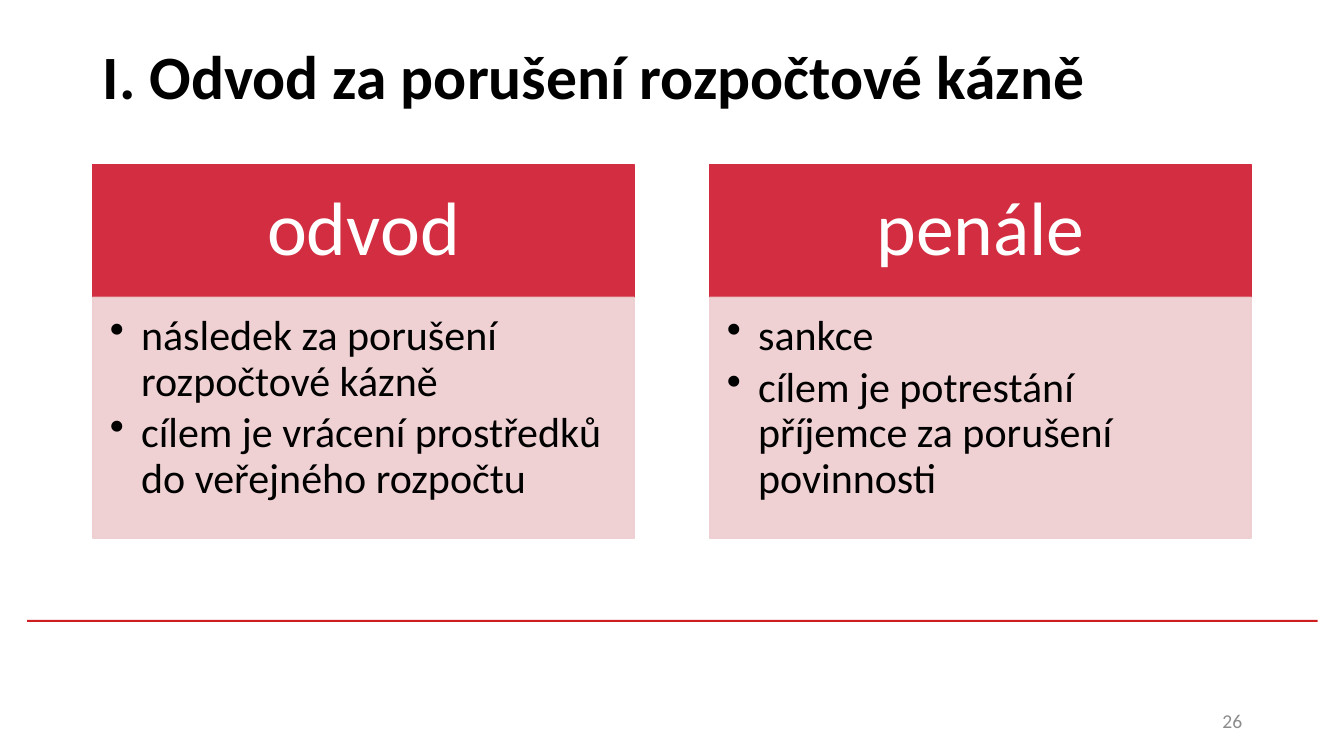
from lxml import etree
from pptx import Presentation
from pptx.dml.color import RGBColor
from pptx.enum.shapes import MSO_SHAPE
from pptx.enum.text import MSO_ANCHOR, MSO_AUTO_SIZE, PP_ALIGN
from pptx.oxml.ns import qn
from pptx.util import Inches, Pt

RECTANGLE = MSO_SHAPE.RECTANGLE
TOP, MIDDLE = MSO_ANCHOR.TOP, MSO_ANCHOR.MIDDLE
LEFT, CENTER, RIGHT = PP_ALIGN.LEFT, PP_ALIGN.CENTER, PP_ALIGN.RIGHT
NO_AUTOFIT = MSO_AUTO_SIZE.NONE

BLACK = RGBColor(0x00, 0x00, 0x00)
WHITE = RGBColor(0xFF, 0xFF, 0xFF)
GRAY = RGBColor(0x8C, 0x8C, 0x8C)
RED = RGBColor(0xD2, 0x2D, 0x40)
RULE_RED = RGBColor(0xCD, 0x1F, 0x21)
PINK = RGBColor(0xEE, 0xCD, 0xCF)

FONT = "Calibri"
COLUMN_LEFT, COLUMN_PITCH, COLUMN_WIDTH = 0.92, 6.12, 5.37
HEADER_TOP, HEADER_HEIGHT, BODY_HEIGHT = 1.63, 1.32, 2.39
COLUMNS = [
    ("odvod", ["následek za porušení rozpočtové kázně",
               "cílem je vrácení prostředků do veřejného rozpočtu"]),
    ("penále", ["sankce",
                "cílem je potrestání příjemce za porušení povinnosti"]),
]


def add_text(paragraph, text, size, color, alignment=LEFT, bold=False):
    """Add one formatted run to a paragraph."""
    paragraph.alignment = alignment
    run = paragraph.add_run()
    run.text = text
    run.font.name = FONT
    run.font.size = Pt(size)
    run.font.bold = bold
    run.font.color.rgb = color


def set_frame(frame, anchor, insets=(0.1, 0.05, 0.1, 0.05)):
    """Set wrapping, anchor and insets of a text frame."""
    frame.word_wrap = True
    frame.auto_size = NO_AUTOFIT
    frame.vertical_anchor = anchor
    (frame.margin_left, frame.margin_top,
     frame.margin_right, frame.margin_bottom) = map(Inches, insets)


def add_bullet(paragraph):
    """Give a paragraph a hanging bullet."""
    properties = paragraph._p.get_or_add_pPr()
    properties.set("marL", str(Inches(0.31)))
    properties.set("indent", str(-Inches(0.31)))
    etree.SubElement(properties, qn("a:buChar")).set("char", "•")


def add_rectangle(slide, left, top, width, height, color, outlined=True, opacity=100):
    """Add a flat rectangle, optionally outlined in its own colour."""
    shape = slide.shapes.add_shape(
        RECTANGLE, Inches(left), Inches(top), Inches(width), Inches(height))
    shape.shadow.inherit = False
    shape.fill.solid()
    shape.fill.fore_color.rgb = color
    if outlined:
        shape.line.color.rgb = color
        shape.line.width = Pt(1)
    else:
        shape.line.fill.background()
    if opacity < 100:
        for color_element in shape._element.spPr.iter(qn("a:srgbClr")):
            etree.SubElement(color_element, qn("a:alpha")).set("val", str(opacity * 1000))
    return shape


def add_column(slide, left, heading, items):
    """Add a red heading box above a pink box of bullets."""
    header = add_rectangle(slide, left, HEADER_TOP, COLUMN_WIDTH, HEADER_HEIGHT, RED)
    set_frame(header.text_frame, MIDDLE, (0.42, 0.24, 0.42, 0.24))
    paragraph = header.text_frame.paragraphs[0]
    paragraph.line_spacing = 0.9
    add_text(paragraph, heading, 54, WHITE, CENTER)

    body = add_rectangle(slide, left, HEADER_TOP + HEADER_HEIGHT,
                         COLUMN_WIDTH, BODY_HEIGHT, PINK, opacity=90)
    frame = body.text_frame
    set_frame(frame, TOP, (0.17, 0.17, 0.23, 0.26))
    for index, item in enumerate(items):
        paragraph = frame.add_paragraph() if index else frame.paragraphs[0]
        paragraph.line_spacing = 0.9
        paragraph.space_after = Pt(4.5)
        add_bullet(paragraph)
        add_text(paragraph, item, 30, BLACK)


def add_title(slide, text):
    """Place and fill the title placeholder."""
    title = slide.shapes.title
    title.left, title.top = Inches(COLUMN_LEFT), Inches(0.02)
    title.width, title.height = Inches(11.67), Inches(1.45)
    set_frame(title.text_frame, MIDDLE)
    add_text(title.text_frame.paragraphs[0], text, 44, BLACK, bold=True)


def add_slide_number(slide, number):
    """Add the slide number at the bottom right."""
    box = slide.shapes.add_textbox(Inches(9.42), Inches(6.95), Inches(3), Inches(0.4))
    set_frame(box.text_frame, MIDDLE)
    add_text(box.text_frame.paragraphs[0], number, 14, GRAY, RIGHT)


def main():
    """Build the slide and save it."""
    presentation = Presentation()
    presentation.slide_width = Inches(13.33)
    presentation.slide_height = Inches(7.5)
    slide = presentation.slides.add_slide(presentation.slide_layouts[5])
    add_rectangle(slide, 0.27, 6.15, 12.8, 0.02, RULE_RED, outlined=False)
    add_title(slide, "I. Odvod za porušení rozpočtové kázně")
    for index, (heading, items) in enumerate(COLUMNS):
        add_column(slide, COLUMN_LEFT + index * COLUMN_PITCH, heading, items)
    add_slide_number(slide, "26")
    presentation.save("out.pptx")


if __name__ == "__main__":
    main()
